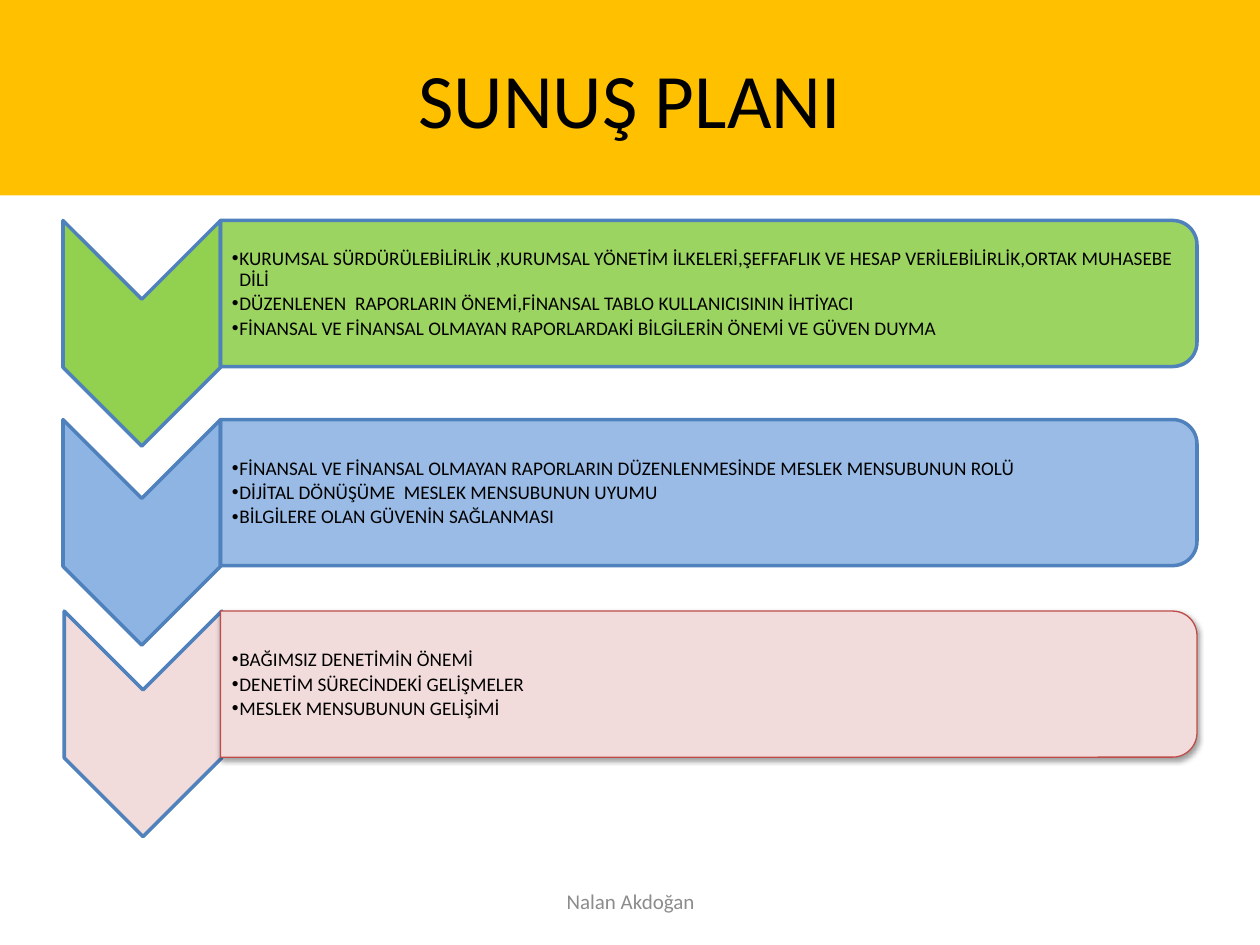
import pptx
import pptx.util
import pptx.oxml
import pptx.oxml.ns
import pptx.dml.color
import pptx.enum.shapes
import pptx.enum.text

Inches = pptx.util.Inches
Pt = pptx.util.Pt
RGBColor = pptx.dml.color.RGBColor
SHAPE = pptx.enum.shapes.MSO_SHAPE
ALIGN = pptx.enum.text.PP_ALIGN
MIDDLE = pptx.enum.text.MSO_ANCHOR.MIDDLE
FIXED = pptx.enum.text.MSO_AUTO_SIZE.NONE

FONT = "Calibri"
BLACK = RGBColor(0x00, 0x00, 0x00)
GRAY = RGBColor(0x8C, 0x8C, 0x8C)
GOLD = RGBColor(0xFF, 0xC0, 0x00)
GREEN = RGBColor(0x92, 0xD0, 0x50)
SKY = RGBColor(0x8E, 0xB4, 0xE3)
PINK = RGBColor(0xF2, 0xDC, 0xDB)
BLUE = RGBColor(0x4F, 0x81, 0xBD)
RED = RGBColor(0xBF, 0x4C, 0x48)

ROWS = [
    (0.5, 1.75, GREEN, False, [
        "KURUMSAL SÜRDÜRÜLEBİLİRLİK ,KURUMSAL YÖNETİM İLKELERİ,ŞEFFAFLIK VE HESAP VERİLEBİLİRLİK,ORTAK MUHASEBE DİLİ",
        "DÜZENLENEN  RAPORLARIN ÖNEMİ,FİNANSAL TABLO KULLANICISININ İHTİYACI",
        "FİNANSAL VE FİNANSAL OLMAYAN RAPORLARDAKİ BİLGİLERİN ÖNEMİ VE GÜVEN DUYMA",
    ]),
    (0.5, 3.33, SKY, False, [
        "FİNANSAL VE FİNANSAL OLMAYAN RAPORLARIN DÜZENLENMESİNDE MESLEK MENSUBUNUN ROLÜ",
        "DİJİTAL DÖNÜŞÜME  MESLEK MENSUBUNUN UYUMU",
        "BİLGİLERE OLAN GÜVENİN SAĞLANMASI",
    ]),
    (0.51, 4.85, PINK, True, [
        "BAĞIMSIZ DENETİMİN ÖNEMİ",
        "DENETİM SÜRECİNDEKİ GELİŞMELER",
        "MESLEK MENSUBUNUN GELİŞİMİ",
    ]),
]


def place(shape, left, top, width, height):
    """Move and size a shape in inches."""
    shape.left, shape.top = Inches(left), Inches(top)
    shape.width, shape.height = Inches(width), Inches(height)


def write(para, text, size, color):
    """Add one styled run to a paragraph."""
    run = para.add_run()
    run.text = text
    run.font.name = FONT
    run.font.size = Pt(size)
    run.font.bold = False
    run.font.color.rgb = color


def turn(slide, kind, box, fill, line, weight):
    """Add a preset shape turned a quarter so that it fills the box."""
    left, top, width, height = box
    shift = (width - height) / 2
    shape = slide.shapes.add_shape(
        kind, Inches(left + shift), Inches(top - shift), Inches(height), Inches(width))
    shape.rotation = 90
    shape.shadow.inherit = False
    shape.fill.solid()
    shape.fill.fore_color.rgb = fill
    shape.line.color.rgb = line
    shape.line.width = Pt(weight)
    return shape


def fade(shape):
    """Make the fill of a shape 90 percent opaque."""
    tag = shape.element.spPr.find(".//" + pptx.oxml.ns.qn("a:srgbClr"))
    tag.append(pptx.oxml.parse_xml(
        f'<a:alpha {pptx.oxml.ns.nsdecls("a")} val="90000"/>'))


def shade(shape):
    """Give a shape a soft shadow below it."""
    effects = shape.element.spPr.find(pptx.oxml.ns.qn("a:effectLst"))
    effects.append(pptx.oxml.parse_xml(
        f'<a:outerShdw {pptx.oxml.ns.nsdecls("a")} blurRad="{Pt(3.1)}" dist="{Pt(1.6)}" '
        'dir="5400000" rotWithShape="0"><a:srgbClr val="000000">'
        '<a:alpha val="38000"/></a:srgbClr></a:outerShdw>'))


def list_text(body, box, lines):
    """Fill a body placeholder with bulleted lines inside the box."""
    place(body, *box)
    parent = body.element.getparent()
    parent.append(body.element)
    frame = body.text_frame
    frame.auto_size = FIXED
    frame.word_wrap = True
    frame.vertical_anchor = MIDDLE
    frame.margin_left = Inches(0.09)
    frame.margin_top = frame.margin_right = frame.margin_bottom = Inches(0.01)
    for i, line in enumerate(lines):
        para = frame.paragraphs[0] if i == 0 else frame.add_paragraph()
        para.alignment = ALIGN.LEFT
        para.line_spacing = 0.9
        para.space_before = Pt(0)
        para.space_after = Pt(2)
        props = para._p.get_or_add_pPr()
        props.set("marL", str(Inches(0.06)))
        props.set("indent", str(Inches(-0.06)))
        props.append(pptx.oxml.parse_xml(
            f'<a:buChar {pptx.oxml.ns.nsdecls("a")} char="•"/>'))
        write(para, line, 11, BLACK)


def row(slide, body, left, top, fill, raised, lines):
    """Draw a chevron, its panel and its list from the given corner."""
    turn(slide, SHAPE.CHEVRON, (left, top, 1.25, 1.79), fill, BLUE, 2)
    line, weight = (RED, 0.75) if raised else (BLUE, 2)
    panel = turn(slide, SHAPE.ROUND_2_SAME_RECTANGLE,
                 (1.75, top, 7.75, 1.16), fill, line, weight)
    if raised:
        shade(panel)
    else:
        fade(panel)
    list_text(body, (1.75, top + 0.06, 7.69, 1.05), lines)


def banner(title, box):
    """Format the title as a filled band over the box."""
    place(title, *box)
    title.fill.solid()
    title.fill.fore_color.rgb = GOLD
    frame = title.text_frame
    frame.auto_size = FIXED
    frame.vertical_anchor = MIDDLE
    para = frame.paragraphs[0]
    para.alignment = ALIGN.CENTER
    write(para, "SUNUŞ PLANI", 44, BLACK)


def footer(slide, box):
    """Write the speaker's name in the box."""
    frame = slide.shapes.add_textbox(*map(Inches, box)).text_frame
    frame.word_wrap = True
    frame.vertical_anchor = MIDDLE
    para = frame.paragraphs[0]
    para.alignment = ALIGN.CENTER
    write(para, "Nalan Akdoğan", 12, GRAY)


def main():
    """Build and save the slide."""
    deck = pptx.Presentation()
    deck.slide_width, deck.slide_height = Inches(10), Inches(7.5)
    slide = deck.slides.add_slide(deck.slide_layouts.get_by_name("Comparison"))
    title, *bodies = slide.placeholders
    banner(title, (0, 0, 10, 1.55))
    for body, item in zip(bodies, ROWS):
        row(slide, body, *item)
    for spare in bodies[len(ROWS):]:
        spare.element.getparent().remove(spare.element)
    footer(slide, (3.42, 6.95, 3.17, 0.4))
    deck.save("out.pptx")


if __name__ == "__main__":
    main()
